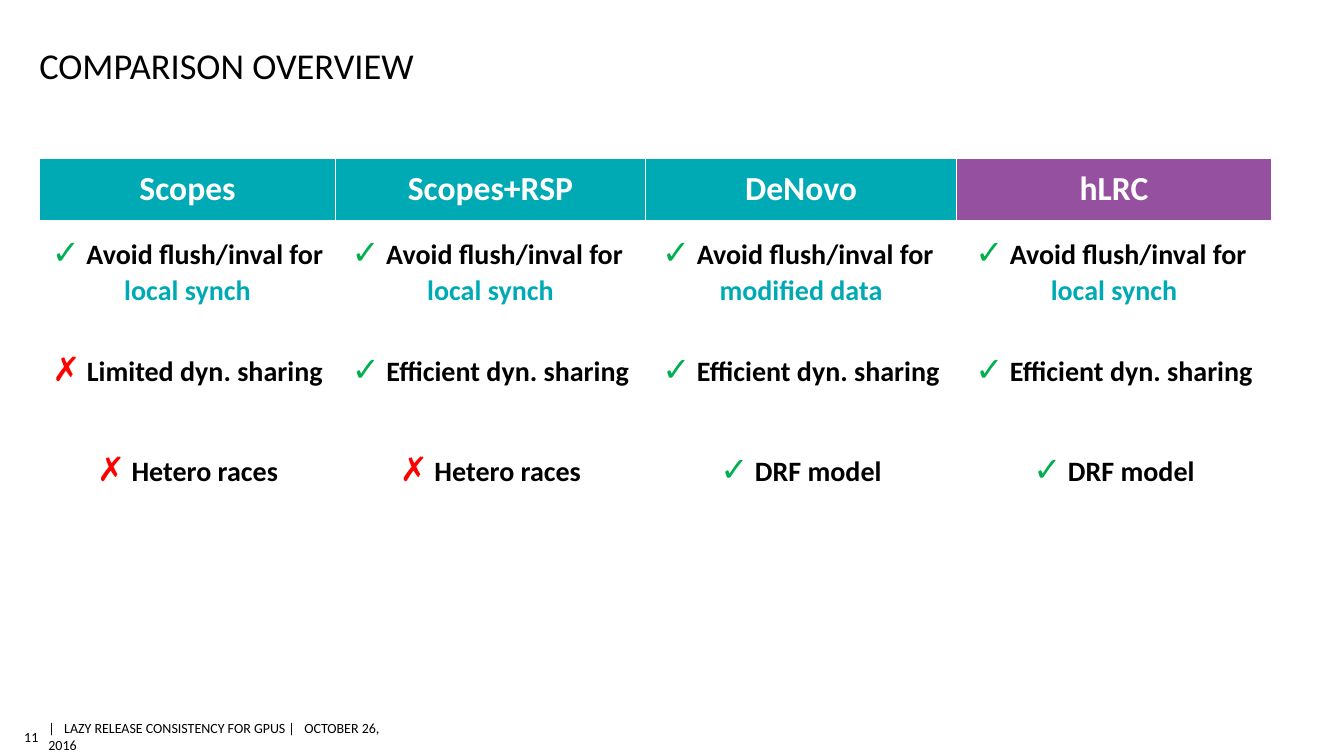
from dataclasses import dataclass

from lxml import etree
from pptx import Presentation
from pptx import util as u
from pptx.dml.color import RGBColor
from pptx.enum import text as t
from pptx.oxml.ns import qn


@dataclass(frozen=True)
class Theme:
    font: str = "Calibri"
    black: str = "000000"
    white: str = "FFFFFF"
    teal: str = "00AAB5"
    purple: str = "9650A0"
    green: str = "00B050"
    red: str = "FF0000"
    title_size: int = 26
    heading_size: int = 24
    body_size: int = 20
    footer_size: int = 10


@dataclass(frozen=True)
class Property:
    good: bool
    claim: str
    scope: str = ""


@dataclass(frozen=True)
class Protocol:
    name: str
    width: float
    color: str
    properties: tuple[Property, ...]


THEME = Theme()


def avoid_flush(scope: str) -> Property:
    return Property(True, "Avoid flush/inval for ", scope)


LIMITED = Property(False, "Limited dyn. sharing")
EFFICIENT = Property(True, "Efficient dyn. sharing")
RACES = Property(False, "Hetero races")
DRF = Property(True, "DRF model")

PROTOCOLS = (
    Protocol("Scopes", 2.94, THEME.teal, (avoid_flush("local synch"), LIMITED, RACES)),
    Protocol("Scopes+RSP", 3.07, THEME.teal, (avoid_flush("local synch"), EFFICIENT, RACES)),
    Protocol("DeNovo", 3.09, THEME.teal, (avoid_flush("modified data"), EFFICIENT, DRF)),
    Protocol("hLRC", 3.12, THEME.purple, (avoid_flush("local synch"), EFFICIENT, DRF)),
)
HEADER_HEIGHT, PROPERTY_HEIGHT = 0.62, 0.99


def style_run(run, size: int, color: str, bold: bool = False) -> None:
    run.font.name = THEME.font
    run.font.size = u.Pt(size)
    run.font.bold = bold
    run.font.color.rgb = RGBColor.from_string(color)


def add_run(paragraph, words: str, size: int, color: str, bold: bool = False):
    run = paragraph.add_run()
    run.text = words
    style_run(run, size, color, bold)
    return run


def add_label(slide, left: float, top: float, width: float, height: float,
              anchor: t.MSO_ANCHOR, inset_top: float, inset_bottom: float):
    frame = slide.shapes.add_textbox(
        u.Inches(left), u.Inches(top), u.Inches(width), u.Inches(height)).text_frame
    frame.word_wrap = True
    frame.vertical_anchor = anchor
    frame.margin_left = frame.margin_right = 0
    frame.margin_top, frame.margin_bottom = u.Inches(inset_top), u.Inches(inset_bottom)
    return frame.paragraphs[0]


def add_borders(cell, color: str) -> None:
    properties = cell._tc.get_or_add_tcPr()
    for position, side in enumerate(("a:lnL", "a:lnR", "a:lnT", "a:lnB")):
        line = etree.Element(qn(side), w=str(u.Pt(1)))
        fill = etree.SubElement(line, qn("a:solidFill"))
        etree.SubElement(fill, qn("a:srgbClr"), val=color)
        properties.insert(position, line)


def fill_heading(cell, protocol: Protocol) -> None:
    cell.vertical_anchor = t.MSO_ANCHOR.MIDDLE
    cell.fill.solid()
    cell.fill.fore_color.rgb = RGBColor.from_string(protocol.color)
    add_borders(cell, THEME.white)
    cell.text_frame.text = protocol.name
    heading = cell.text_frame.paragraphs[0]
    heading.alignment = t.PP_ALIGN.CENTER
    style_run(heading.runs[0], THEME.heading_size, THEME.white, True)


def fill_property(cell, item: Property) -> None:
    cell.vertical_anchor = t.MSO_ANCHOR.MIDDLE
    cell.fill.background()
    claim = cell.text_frame.paragraphs[0]
    claim.alignment = t.PP_ALIGN.CENTER
    mark, color = ("✓", THEME.green) if item.good else ("✗", THEME.red)
    add_run(claim, mark, THEME.heading_size, color, True)
    add_run(claim, " " + item.claim, THEME.body_size, THEME.black, True)
    if item.scope:
        scope = cell.text_frame.add_paragraph()
        scope.alignment = t.PP_ALIGN.CENTER
        add_run(scope, item.scope, THEME.body_size, THEME.teal, True)


def add_comparison(slide) -> None:
    row_count = 1 + len(PROTOCOLS[0].properties)
    table = slide.shapes.add_table(
        row_count, len(PROTOCOLS), u.Inches(0.39), u.Inches(1.57),
        u.Inches(sum(protocol.width for protocol in PROTOCOLS)),
        u.Inches(HEADER_HEIGHT + (row_count - 1) * PROPERTY_HEIGHT)).table
    table.horz_banding = False
    for index, row in enumerate(table.rows):
        row.height = u.Inches(PROPERTY_HEIGHT if index else HEADER_HEIGHT)
    for column, protocol in enumerate(PROTOCOLS):
        table.columns[column].width = u.Inches(protocol.width)
        fill_heading(table.cell(0, column), protocol)
        for row, item in enumerate(protocol.properties, start=1):
            fill_property(table.cell(row, column), item)


def add_footer(slide) -> None:
    middle = t.MSO_ANCHOR.MIDDLE
    footer = add_label(slide, 0.48, 7.18, 3.46, 0.26, middle, 0.04, 0.04)
    for words in ("LAZY RELEASE CONSISTENCY FOR GPUS ", "OCTOBER 26, 2016"):
        # Letter spacing widens the gap after each bar
        bar = add_run(footer, "| ", THEME.footer_size, THEME.black)
        bar.font._element.set("spc", "225")
        add_run(footer, words, THEME.footer_size, THEME.black)
    number = add_label(slide, 0.22, 7.18, 0.16, 0.26, middle, 0.04, 0.04)
    number.alignment = t.PP_ALIGN.RIGHT
    add_run(number, "11", THEME.footer_size, THEME.black)


def main() -> None:
    deck = Presentation()
    deck.slide_width, deck.slide_height = u.Inches(13.33), u.Inches(7.5)
    slide = deck.slides.add_slide(deck.slide_layouts[6])

    # Footer and slide number
    add_footer(slide)

    # Comparison of the protocols
    add_comparison(slide)

    # Title
    title = add_label(slide, 0.39, 0.34, 11.2, 0.52, t.MSO_ANCHOR.BOTTOM, 0.05, 0)
    add_run(title, "COMPARISON OVERVIEW", THEME.title_size, THEME.black)

    deck.save("out.pptx")


if __name__ == "__main__":
    main()
